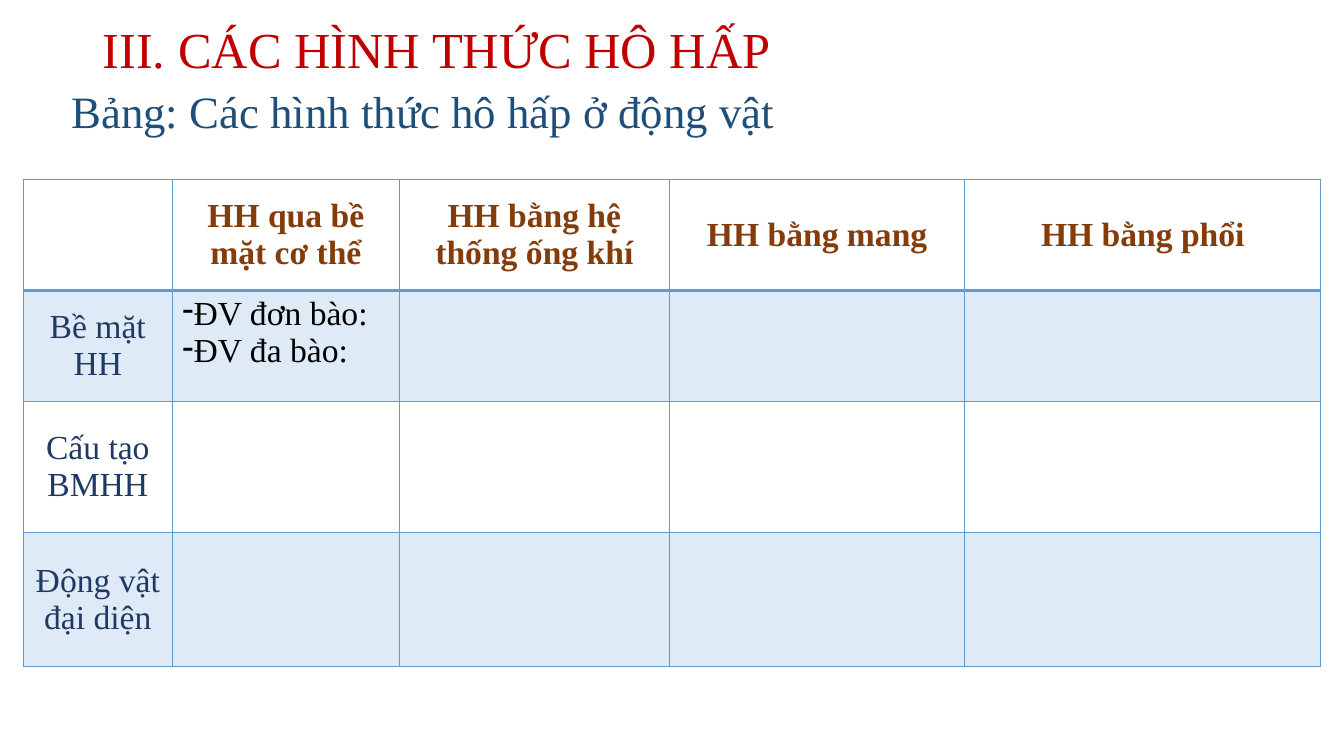
from lxml import etree
from pptx import Presentation
from pptx.dml.color import RGBColor
from pptx.enum.text import MSO_ANCHOR, PP_ALIGN
from pptx.oxml.ns import qn
from pptx.util import Inches, Pt

MIDDLE, TOP = MSO_ANCHOR.MIDDLE, MSO_ANCHOR.TOP
CENTER, LEFT = PP_ALIGN.CENTER, PP_ALIGN.LEFT

FONT = "Times New Roman"
RED = RGBColor(0xC0, 0x00, 0x00)
BLUE = RGBColor(0x1F, 0x4E, 0x79)
NAVY = RGBColor(0x20, 0x38, 0x64)
BROWN = RGBColor(0x84, 0x3C, 0x0B)
BLACK = RGBColor(0x00, 0x00, 0x00)
GRID = RGBColor(0x5B, 0x9B, 0xD5)

COLUMN_WIDTHS = [1.48, 2.25, 2.68, 2.93, 3.53]
ROW_HEIGHTS = [1.1, 1.1, 1.3, 1.33]
HEADERS = ["HH qua bề mặt cơ thể", "HH bằng hệ thống ống khí",
           "HH bằng mang", "HH bằng phổi"]
ROW_LABELS = [["Bề mặt HH"], ["Cấu tạo", "BMHH"], ["Động vật đại diện"]]
BODY_SURFACE = ["ĐV đơn bào:", "ĐV đa bào:"]


def style_font(para, size, color, bold=False):
    para.font.name = FONT
    para.font.size = Pt(size)
    para.font.color.rgb = color
    para.font.bold = bold


def add_heading(page, text, left, top, width, height, size, color,
                anchor=TOP, spacing=1.0):
    box = page.shapes.add_textbox(Inches(left), Inches(top),
                                  Inches(width), Inches(height))
    frame = box.text_frame
    frame.word_wrap = True
    frame.vertical_anchor = anchor
    para = frame.paragraphs[0]
    para.text = text
    para.line_spacing = spacing
    style_font(para, size, color)


def add_dash_bullet(para):
    properties = para._p.get_or_add_pPr()
    indent = Inches(0.06)
    properties.set("marL", str(indent))
    properties.set("indent", str(-indent))
    etree.SubElement(properties, qn("a:buChar"), char="-")


def write_cell(cell, lines, color, bold=False, align=CENTER, anchor=MIDDLE,
               bulleted=False):
    cell.vertical_anchor = anchor
    frame = cell.text_frame
    frame.text = "\n".join(lines)
    for para in frame.paragraphs:
        para.alignment = align
        if bulleted:
            add_dash_bullet(para)
        style_font(para, 24, color, bold)


def set_borders(cell, bottom_width):
    properties = cell._tc.get_or_add_tcPr()
    for side, width in (("L", 1), ("R", 1), ("T", 1), ("B", bottom_width)):
        line = etree.SubElement(properties, qn(f"a:ln{side}"), w=str(Pt(width)))
        fill = etree.SubElement(line, qn("a:solidFill"))
        etree.SubElement(fill, qn("a:srgbClr"), val=str(GRID))


def set_fill(cell, shaded):
    if not shaded:
        cell.fill.background()
        return
    cell.fill.solid()
    cell.fill.fore_color.rgb = GRID
    color = cell._tc.tcPr.find(qn("a:solidFill")).find(qn("a:srgbClr"))
    etree.SubElement(color, qn("a:alpha"), val="20000")


def add_breathing_table(page):
    table = page.shapes.add_table(
        len(ROW_HEIGHTS), len(COLUMN_WIDTHS), Inches(0.23), Inches(1.78),
        Inches(sum(COLUMN_WIDTHS)), Inches(sum(ROW_HEIGHTS))).table
    table.first_row = False
    table.horz_banding = False
    for column, width in zip(table.columns, COLUMN_WIDTHS):
        column.width = Inches(width)
    for row_index, height in enumerate(ROW_HEIGHTS):
        row = table.rows[row_index]
        row.height = Inches(height)
        for cell in row.cells:
            set_borders(cell, 2 if row_index == 0 else 1)
            set_fill(cell, row_index % 2 == 1)

    # Column headers, row labels and the one started answer
    for index, header in enumerate(HEADERS, 1):
        write_cell(table.cell(0, index), [header], BROWN, bold=True)
    for index, lines in enumerate(ROW_LABELS, 1):
        write_cell(table.cell(index, 0), lines, NAVY)
    write_cell(table.cell(1, 1), BODY_SURFACE, BLACK, align=LEFT, anchor=TOP,
               bulleted=True)


def main():
    deck = Presentation()
    deck.slide_width = Inches(13.33)
    deck.slide_height = Inches(7.5)
    page = deck.slides.add_slide(deck.slide_layouts[6])

    # Title and table caption
    add_heading(page, "III. CÁC HÌNH THỨC HÔ HẤP", 0.92, 0.12, 11.5, 0.8,
                36, RED, anchor=MIDDLE, spacing=0.9)
    add_heading(page, "Bảng: Các hình thức hô hấp ở động vật",
                0.61, 0.78, 9.7, 0.64, 32, BLUE)

    # Table to fill in
    add_breathing_table(page)
    deck.save("out.pptx")


if __name__ == "__main__":
    main()
